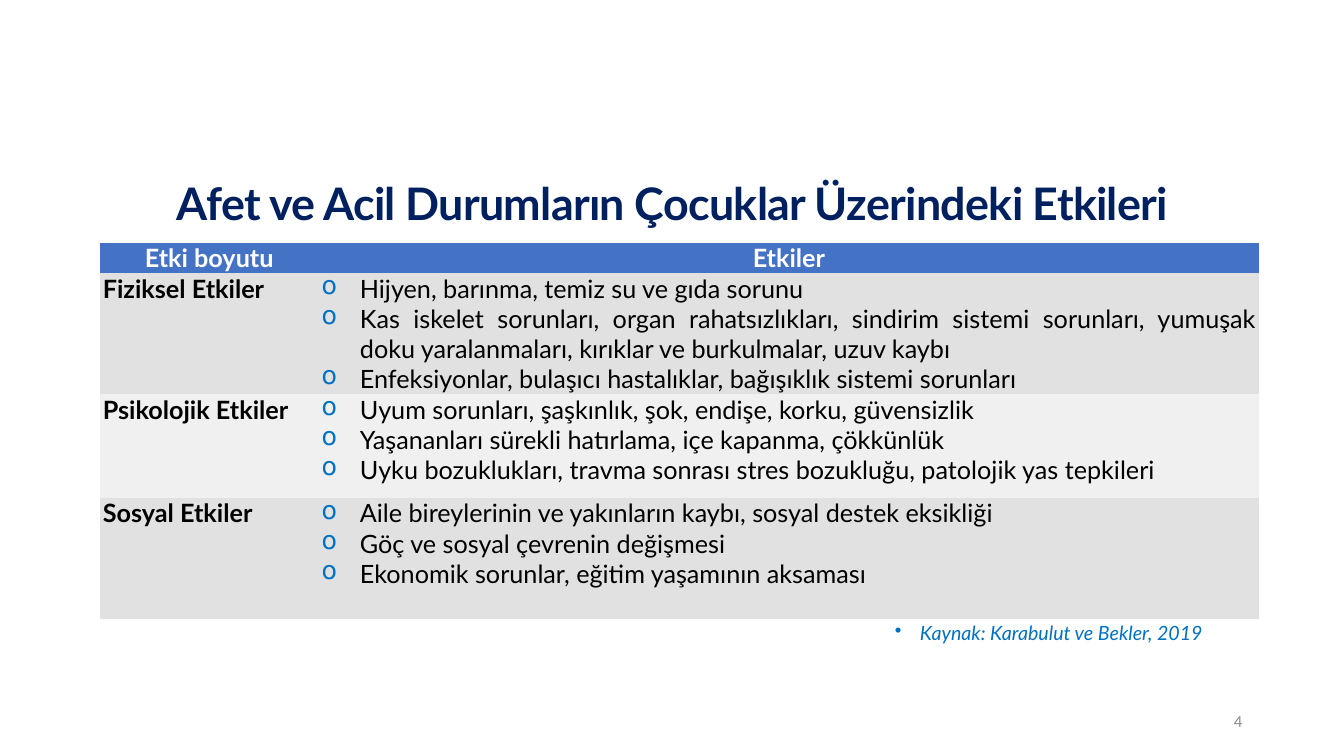
from dataclasses import dataclass

from lxml import etree
from pptx import Presentation
from pptx.dml.color import RGBColor
from pptx.enum.text import MSO_ANCHOR, PP_ALIGN
from pptx.oxml.ns import qn
from pptx.util import Inches, Pt

CENTER, RIGHT, JUSTIFY = PP_ALIGN.CENTER, PP_ALIGN.RIGHT, PP_ALIGN.JUSTIFY
TOP, MIDDLE = MSO_ANCHOR.TOP, MSO_ANCHOR.MIDDLE
PLAIN_TABLE_STYLE = "{2D5ABB26-0587-4C30-8999-92F81FD0307C}"


@dataclass(frozen=True)
class TextStyle:
    size: float
    color: str
    font: str = "Lato"
    bold: bool = False
    italic: bool = False
    spacing: float = 0


@dataclass(frozen=True)
class Theme:
    title = TextStyle(32, "002060", bold=True, spacing=-0.5)
    header = TextStyle(18, "FFFFFF", bold=True)
    dimension = TextStyle(18, "000000", bold=True)
    effect = TextStyle(18, "000000")
    citation = TextStyle(14, "0070C0", italic=True)
    page_number = TextStyle(12, "8C8C8C", font="Calibri")
    bullet = "0070C0"
    header_fill = "4472C4"
    row_fills = ("E1E1E1", "F0F0F0")


@dataclass(frozen=True)
class EffectRow:
    dimension: str
    effects: tuple[str, ...]
    height: float


THEME = Theme()
HEADINGS = ("Etki boyutu", "Etkiler")
HEADER_HEIGHT = 0.3
COLUMN_WIDTHS = (2.17, 9.33)
EFFECT_ROWS = (
    EffectRow("Fiziksel Etkiler", (
        "Hijyen, barınma, temiz su ve gıda sorunu",
        "Kas iskelet sorunları, organ rahatsızlıkları, sindirim sistemi sorunları, "
        "yumuşak doku yaralanmaları, kırıklar ve burkulmalar, uzuv kaybı",
        "Enfeksiyonlar, bulaşıcı hastalıklar, bağışıklık sistemi sorunları",
    ), 1.2),
    EffectRow("Psikolojik Etkiler", (
        "Uyum sorunları, şaşkınlık, şok, endişe, korku, güvensizlik",
        "Yaşananları sürekli hatırlama, içe kapanma, çökkünlük",
        "Uyku bozuklukları, travma sonrası stres bozukluğu, patolojik yas tepkileri",
    ), 1.03),
    EffectRow("Sosyal Etkiler", (
        "Aile bireylerinin ve yakınların kaybı, sosyal destek eksikliği",
        "Göç ve sosyal çevrenin değişmesi",
        "Ekonomik sorunlar, eğitim yaşamının aksaması",
    ), 1.2),
)


def add_run(paragraph, text: str, style: TextStyle) -> None:
    run = paragraph.add_run()
    run.text = text
    font = run.font
    font.name, font.size = style.font, Pt(style.size)
    font.bold, font.italic = style.bold, style.italic
    font.color.rgb = RGBColor.from_string(style.color)
    if style.spacing:
        run._r.get_or_add_rPr().set("spc", str(round(style.spacing * 100)))


def add_bullet(paragraph, character: str, color: str, indent: float) -> None:
    """Give the paragraph a hanging bullet."""
    properties = paragraph._p.get_or_add_pPr()
    properties.set("marL", str(Inches(indent)))
    properties.set("indent", str(-Inches(indent)))
    bullet_color = etree.SubElement(properties, qn("a:buClr"))
    etree.SubElement(bullet_color, qn("a:srgbClr"), val=color)
    etree.SubElement(properties, qn("a:buChar"), char=character)


def add_text_box(slide, box: tuple[float, ...], text: str, style: TextStyle,
                 alignment: PP_ALIGN, anchor: MSO_ANCHOR, line_spacing: float = 1.0,
                 bullet: str = "") -> None:
    frame = slide.shapes.add_textbox(*map(Inches, box)).text_frame
    frame.word_wrap = True
    frame.vertical_anchor = anchor
    paragraph = frame.paragraphs[0]
    if bullet:
        add_bullet(paragraph, bullet, style.color, 0.25)
    paragraph.alignment = alignment
    paragraph.line_spacing = line_spacing
    add_run(paragraph, text, style)


def fill_cell(cell, lines: tuple[str, ...], style: TextStyle, fill: str,
              alignment: PP_ALIGN, bullet: str = "") -> None:
    cell.margin_left = cell.margin_right = Inches(0.03)
    cell.margin_top = cell.margin_bottom = 0
    cell.fill.solid()
    cell.fill.fore_color.rgb = RGBColor.from_string(fill)
    frame = cell.text_frame
    for index, line in enumerate(lines):
        paragraph = frame.add_paragraph() if index else frame.paragraphs[0]
        if bullet:
            add_bullet(paragraph, bullet, THEME.bullet, 0.38)
        paragraph.alignment = alignment
        add_run(paragraph, line, style)


def add_effects_table(slide) -> None:
    heights = (HEADER_HEIGHT, *(row.height for row in EFFECT_ROWS))
    box = (0.99, 2.41, sum(COLUMN_WIDTHS), sum(heights))
    table = slide.shapes.add_table(len(heights), len(COLUMN_WIDTHS), *map(Inches, box)).table
    table.horz_banding = False
    table._tbl.tblPr.find(qn("a:tableStyleId")).text = PLAIN_TABLE_STYLE
    for column, width in zip(table.columns, COLUMN_WIDTHS):
        column.width = Inches(width)
    for row, height in zip(table.rows, heights):
        row.height = Inches(height)
    for index, heading in enumerate(HEADINGS):
        fill_cell(table.cell(0, index), (heading,), THEME.header, THEME.header_fill, CENTER)
    for index, row in enumerate(EFFECT_ROWS):
        fill = THEME.row_fills[index % 2]
        fill_cell(table.cell(index + 1, 0), (row.dimension,), THEME.dimension, fill, JUSTIFY)
        fill_cell(table.cell(index + 1, 1), row.effects, THEME.effect, fill, JUSTIFY, "o")


def main() -> None:
    presentation = Presentation()
    presentation.slide_width, presentation.slide_height = Inches(13.33), Inches(7.5)
    slide = presentation.slides.add_slide(presentation.slide_layouts[6])
    add_text_box(slide, (0.92, 1.68, 11.5, 0.73),
                 "Afet ve Acil Durumların Çocuklar Üzerindeki Etkileri",
                 THEME.title, CENTER, MIDDLE, 0.9)
    add_text_box(slide, (0.76, 6.14, 11.27, 0.37), "Kaynak: Karabulut ve Bekler, 2019",
                 THEME.citation, RIGHT, TOP, 0.9, "•")
    add_effects_table(slide)
    add_text_box(slide, (9.42, 6.95, 3, 0.4), "4", THEME.page_number, RIGHT, MIDDLE)
    presentation.save("out.pptx")


if __name__ == "__main__":
    main()
